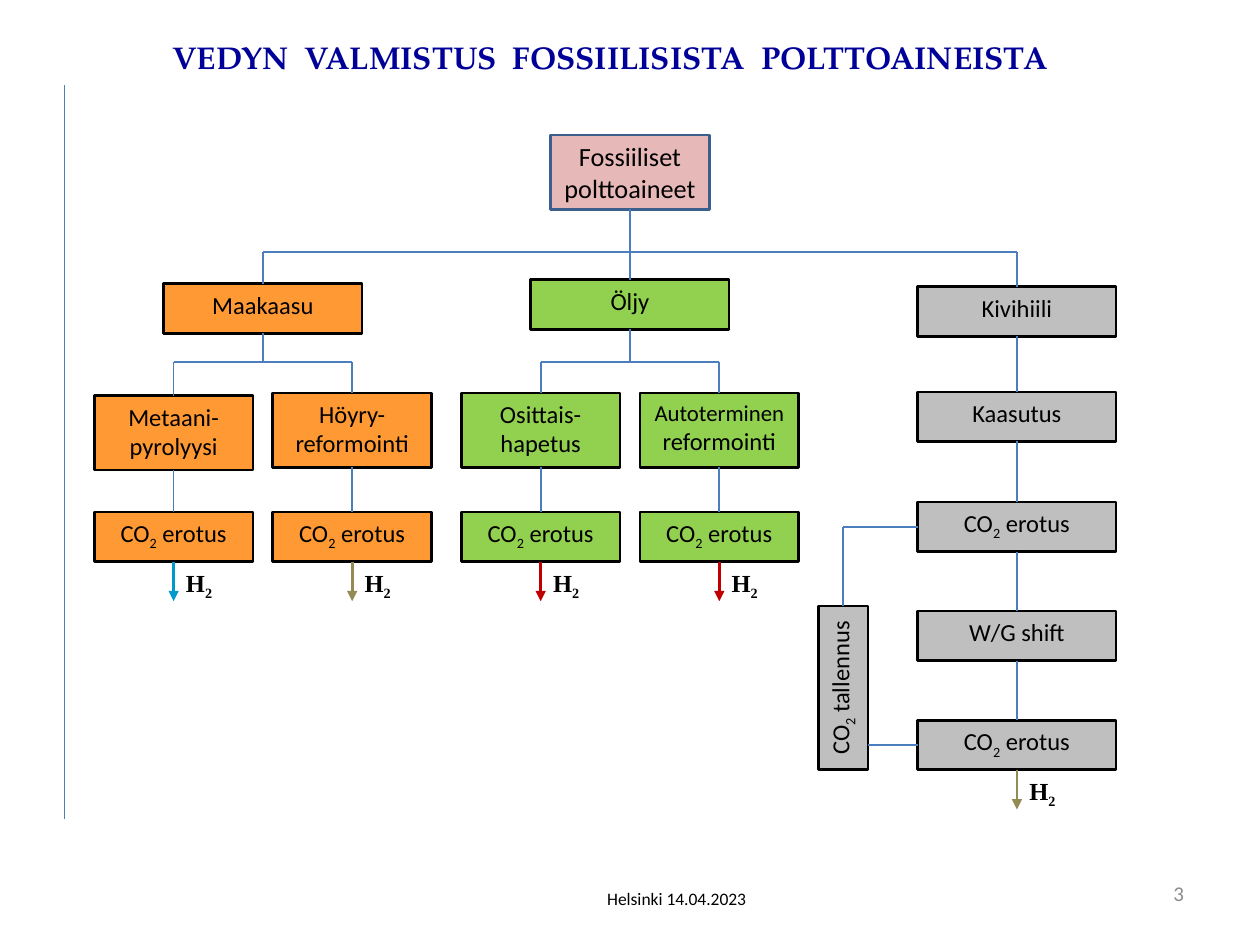
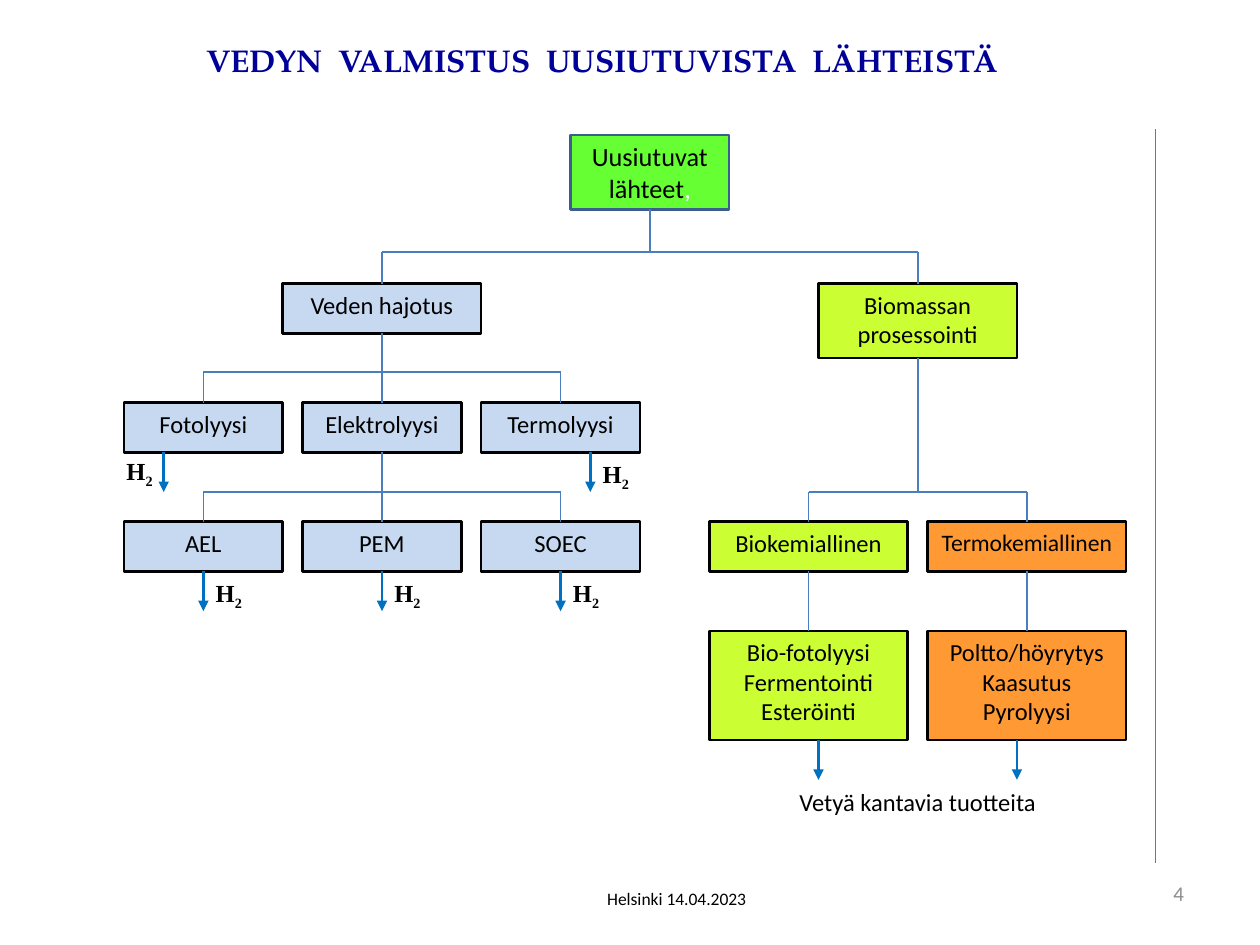
from lxml.etree import SubElement
from pptx import Presentation
from pptx.dml.color import RGBColor
from pptx.enum.shapes import MSO_CONNECTOR, MSO_SHAPE
from pptx.enum.text import MSO_ANCHOR, MSO_AUTO_SIZE, PP_ALIGN
from pptx.oxml.ns import qn
from pptx.util import Emu, Inches, Mm, Pt

BLACK = RGBColor(0x00, 0x00, 0x00)
WHITE = RGBColor(0xFF, 0xFF, 0xFF)
GREY_TEXT = RGBColor(0x8C, 0x8C, 0x8C)
TITLE_BLUE = RGBColor(0x00, 0x00, 0x99)
LINE_BLUE = RGBColor(0x4B, 0x7E, 0xBC)
ROOT_BORDER = RGBColor(0x3A, 0x5F, 0x8C)
ROSE = RGBColor(0xE6, 0xB9, 0xB8)
ORANGE = RGBColor(0xFF, 0x99, 0x33)
GREEN = RGBColor(0x92, 0xD0, 0x50)
GREY = RGBColor(0xBF, 0xBF, 0xBF)
BRIGHT_GREEN = RGBColor(0x66, 0xFF, 0x33)
PALE_BLUE = RGBColor(0xC6, 0xD9, 0xF1)
LIME = RGBColor(0xCC, 0xFF, 0x33)
CYAN_ARROW = RGBColor(0x00, 0x99, 0xCC)
KHAKI_ARROW = RGBColor(0x94, 0x8A, 0x54)
RED_ARROW = RGBColor(0xC0, 0x00, 0x00)
BLUE_ARROW = RGBColor(0x00, 0x70, 0xC0)

BODY_FONT = "Calibri"
TITLE_FONT = "TeX Gyre Pagella"
FORMULA_FONT = "Times New Roman"
TOP, LEFT, BOTTOM = 0, 1, 2
NARROW, WIDE = 16, 20
LOW, TALL, LIST_HEIGHT = 5, 7.5, 11
ARROW_LENGTH = 4
CO2_REMOVAL = "CO~2~ erotus"


def grid(steps):
    """Turn grid steps of two millimetres into a length."""
    return Emu(round(steps * Mm(2)))


def add_run(paragraph, text, size=14, color=BLACK, font=BODY_FONT, bold=False,
            subscript=False):
    """Append one formatted run to a paragraph."""
    run = paragraph.add_run()
    run.text = text
    run.font.size = Pt(size)
    run.font.name = font
    run.font.bold = bold
    run.font.color.rgb = color
    if subscript:
        run.font._element.set("baseline", "-25000")


def write_text(shape, text, align=PP_ALIGN.CENTER, anchor=MSO_ANCHOR.TOP,
               inset=0.1, **style):
    """Fill a shape with lines of text, where ~ marks enclose subscripts."""
    frame = shape.text_frame
    frame.word_wrap = True
    frame.auto_size = MSO_AUTO_SIZE.NONE
    frame.vertical_anchor = anchor
    frame.margin_left = frame.margin_right = Inches(inset)
    frame.margin_top = frame.margin_bottom = Inches(0.05)
    for index, line in enumerate(text.split("\n")):
        paragraph = frame.paragraphs[0] if index == 0 else frame.add_paragraph()
        paragraph.alignment = align
        for part, piece in enumerate(line.split("~")):
            if piece:
                add_run(paragraph, piece, subscript=part % 2 == 1, **style)
    return paragraph


def add_label(slide, text, left, top, width, height, **style):
    """Add a text box placed on the grid."""
    label = slide.shapes.add_textbox(*map(grid, (left, top, width, height)))
    return write_text(label, text, **style)


def add_box(slide, text, center, top, fill, width=NARROW, height=LOW,
            border=BLACK, **style):
    """Add a bordered rectangle centred on a grid column."""
    box = slide.shapes.add_shape(
        MSO_SHAPE.RECTANGLE,
        *map(grid, (center - width / 2, top, width, height)))
    box.shadow.inherit = False
    box.fill.solid()
    box.fill.fore_color.rgb = fill
    box.line.color.rgb = border
    box.line.width = Pt(1.5)
    write_text(box, text, inset=0.05, **style)
    return box


def add_root(slide, text, center, fill):
    """Add the box at the top of a tree."""
    return add_box(slide, text, center, 13.6, fill, height=TALL,
                   border=ROOT_BORDER, size=15, anchor=MSO_ANCHOR.MIDDLE)


def add_line(slide, start, end, color=LINE_BLUE, width=1, arrow=False,
             begin_at=None, end_at=None):
    """Draw a straight connector, joined to shape sides where given."""
    line = slide.shapes.add_connector(MSO_CONNECTOR.STRAIGHT, *start, *end)
    line.line.color.rgb = color
    line.line.width = Pt(width)
    if arrow:
        SubElement(line.line._get_or_add_ln(), qn("a:tailEnd"), type="triangle")
    SubElement(line._element.spPr, qn("a:effectLst"))
    if begin_at:
        line.begin_connect(*begin_at)
    if end_at:
        line.end_connect(*end_at)


def top_of(box):
    """Return the middle of the top side."""
    return box.left + box.width // 2, box.top


def bottom_of(box):
    """Return the middle of the bottom side."""
    return box.left + box.width // 2, box.top + box.height


def join_chain(slide, *boxes):
    """Join each box to the one below it."""
    for upper, lower in zip(boxes, boxes[1:]):
        add_line(slide, bottom_of(upper), top_of(lower),
                 begin_at=(upper, BOTTOM), end_at=(lower, TOP))


def join_tree(slide, parent, children, bar_row):
    """Join a parent to its children through a horizontal bar."""
    bar = grid(bar_row)
    centers = [top_of(child)[0] for child in children]
    trunk = bottom_of(parent)
    add_line(slide, trunk, (trunk[0], bar), begin_at=(parent, BOTTOM))
    add_line(slide, (min(centers), bar), (max(centers), bar))
    for child, center in zip(children, centers):
        add_line(slide, (center, bar), top_of(child), end_at=(child, TOP))


def add_outlet(slide, box, color, shift=0, label_shift=(0, 0), label="H~2~"):
    """Add an arrow below a box, with its product beside it."""
    x, y = bottom_of(box)
    x += grid(shift)
    add_line(slide, (x, y), (x, y + grid(ARROW_LENGTH)), color, 1.5, arrow=True,
             begin_at=None if shift else (box, BOTTOM))
    if label:
        add_label(slide, label, x / grid(1) + label_shift[0],
                  y / grid(1) + label_shift[1], 7, 4.3,
                  align=PP_ALIGN.LEFT, font=FORMULA_FONT, bold=True)


def add_slide_number(slide, number):
    """Add the slide number as a live field."""
    paragraph = add_label(slide, str(number), 91, 86.75, 29.6, 6.6,
                          align=PP_ALIGN.RIGHT, anchor=MSO_ANCHOR.MIDDLE,
                          size=12, color=GREY_TEXT)
    run = paragraph.runs[0]._r
    field = SubElement(paragraph._p, qn("a:fld"), type="slidenum",
                       id="{B6F15528-21DE-4FAA-801E-634DDDAF4B2B}")
    for part in list(run):
        field.append(part)
    paragraph._p.remove(run)


def start_slide(presentation, title, title_left, title_top, number, rule, rule_top):
    """Add a slide with its title, side rule, footer and number."""
    slide = presentation.slides.add_slide(presentation.slide_layouts[5])
    heading = slide.shapes.title
    heading.left, heading.top, heading.width, heading.height = map(
        grid, (title_left, title_top, 100, 5))
    write_text(heading, title, size=18, color=TITLE_BLUE, font=TITLE_FONT, bold=True)
    add_line(slide, (grid(rule), grid(rule_top)),
             (grid(rule), grid(rule_top + 74)), width=0.75)
    add_label(slide, "Helsinki 14.04.2023", 55.5, 88.9, 25.4, 3.4, size=10)
    add_slide_number(slide, number)
    return slide


def build_fossil_slide(presentation):
    """Build the tree of hydrogen from fossil fuels."""
    slide = start_slide(presentation, "VEDYN  VALMISTUS  FOSSIILISISTA  POLTTOAINEISTA",
                        11.5, 3.2, 3, 6.5, 8.6)
    root = add_root(slide, "Fossiiliset\npolttoaineet", 63.5, ROSE)
    gas = add_box(slide, "Maakaasu", 26.5, 28.6, ORANGE, WIDE)
    oil = add_box(slide, "Öljy", 63.5, 28.2, GREEN, WIDE)
    coal = add_box(slide, "Kivihiili", 102.5, 28.9, GREY, WIDE)
    join_tree(slide, root, [gas, oil, coal], 25.4)

    methods = []
    for text, center, top, fill, arrow_color in (
            ("Metaani-\npyrolyysi", 17.5, 39.9, ORANGE, CYAN_ARROW),
            ("Höyry-\nreformointi", 35.5, 39.6, ORANGE, KHAKI_ARROW),
            ("Osittais-\nhapetus", 54.5, 39.6, GREEN, RED_ARROW),
            ("Autoterminen\nreformointi", 72.5, 39.6, GREEN, RED_ARROW)):
        method = add_box(slide, text, center, top, fill, height=TALL)
        removal = add_box(slide, CO2_REMOVAL, center, 51.6, fill)
        join_chain(slide, method, removal)
        add_outlet(slide, removal, arrow_color)
        methods.append(method)
    methods[-1].text_frame.paragraphs[0].runs[0].font.size = Pt(13)
    join_tree(slide, gas, methods[:2], 36.5)
    join_tree(slide, oil, methods[2:], 36.5)

    steps = [add_box(slide, text, 102.5, top, GREY, WIDE) for text, top in (
        ("Kaasutus", 39.5), (CO2_REMOVAL, 50.6),
        ("W/G shift", 61.6), (CO2_REMOVAL, 72.6))]
    join_chain(slide, coal, *steps)
    add_outlet(slide, steps[-1], KHAKI_ARROW)

    storage = add_box(slide, "CO~2~ tallennus", 85, 61.1, GREY, LOW, 16.5)
    storage.text_frame._txBody.bodyPr.set("vert", "vert270")
    first, last = steps[1], steps[3]
    first_y, last_y = (step.top + step.height // 2 for step in (first, last))
    corner = (top_of(storage)[0], first_y)
    add_line(slide, (first.left, first_y), corner, begin_at=(first, LEFT))
    add_line(slide, corner, top_of(storage), end_at=(storage, TOP))
    add_line(slide, (last.left, last_y), (storage.left + storage.width, last_y),
             width=0.75, begin_at=(last, LEFT))


def build_renewable_slide(presentation):
    """Build the tree of hydrogen from renewable sources."""
    slide = start_slide(presentation, "VEDYN  VALMISTUS  UUSIUTUVISTA  LÄHTEISTÄ",
                        10.7, 3.5, 4, 116.5, 13)
    root = add_root(slide, "Uusiutuvat\nlähteet", 65.5, BRIGHT_GREEN)
    add_run(root.text_frame.paragraphs[-1], ",", size=15, color=WHITE)
    water = add_box(slide, "Veden hajotus", 38.5, 28.6, PALE_BLUE, WIDE)
    biomass = add_box(slide, "Biomassan\nprosessointi", 92.5, 28.6, LIME, WIDE, TALL)
    join_tree(slide, root, [water, biomass], 25.4)

    splitting, cells = (
        [add_box(slide, text, 20.5 + 18 * column, top, PALE_BLUE)
         for column, text in enumerate(names)]
        for top, names in ((40.6, ("Fotolyysi", "Elektrolyysi", "Termolyysi")),
                           (52.6, ("AEL", "PEM", "SOEC"))))
    join_tree(slide, water, splitting, 37.5)
    join_tree(slide, splitting[1], cells, 49.6)
    add_outlet(slide, splitting[0], BLUE_ARROW, shift=-4, label_shift=(-5, -0.3))
    add_outlet(slide, splitting[2], BLUE_ARROW, shift=3)
    for cell in cells:
        add_outlet(slide, cell, BLUE_ARROW)

    routes = []
    for text, products, center, fill, size, shift in (
            ("Biokemiallinen", "Bio-fotolyysi\nFermentointi\nEsteröinti",
             81.5, LIME, 14, 1),
            ("Termokemiallinen", "Poltto/höyrytys\nKaasutus\nPyrolyysi",
             103.5, ORANGE, 13.5, -1)):
        route = add_box(slide, text, center, 52.6, fill, WIDE, size=size)
        process = add_box(slide, products, center, 63.6, fill, WIDE, LIST_HEIGHT)
        join_chain(slide, route, process)
        add_outlet(slide, process, BLUE_ARROW, shift=shift, label=None)
        routes.append(route)
    join_tree(slide, biomass, routes, 49.6)
    add_label(slide, "Vetyä kantavia tuotteita", 73.5, 78.7, 38, 5.8)


def main():
    """Build and save the presentation."""
    presentation = Presentation()
    presentation.slide_width = Inches(10)
    presentation.slide_height = Inches(7.5)
    presentation.element.set("firstSlideNum", "3")
    build_fossil_slide(presentation)
    build_renewable_slide(presentation)
    presentation.save("out.pptx")


if __name__ == "__main__":
    main()
